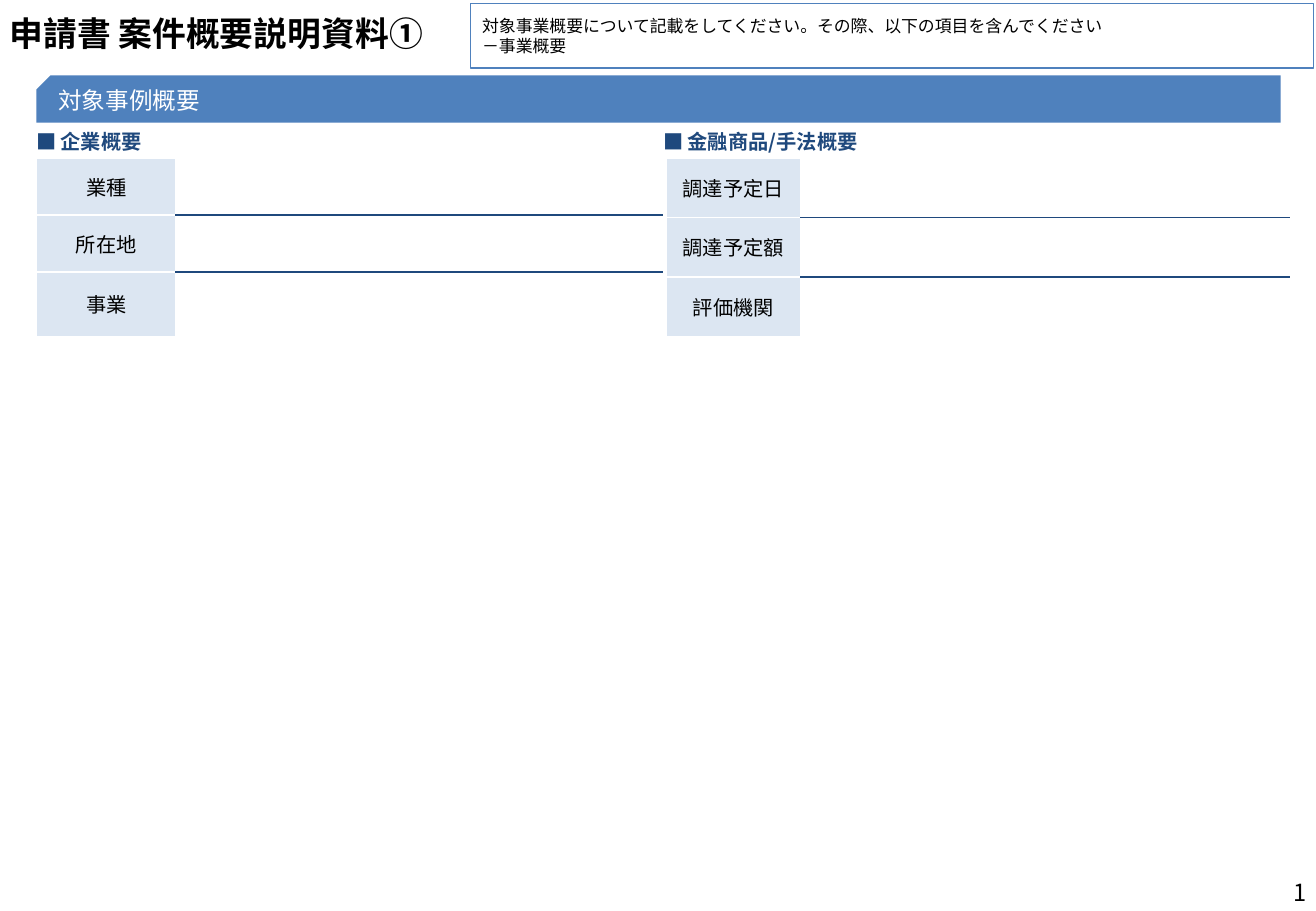
"""Build the application summary slide with two overview tables."""
from dataclasses import dataclass

from lxml import etree
from pptx import Presentation
from pptx.dml.color import RGBColor
from pptx.enum.shapes import MSO_SHAPE
from pptx.enum.text import MSO_ANCHOR, PP_ALIGN
from pptx.oxml.ns import qn
from pptx.util import Inches, Pt

RECT, SNIP, OCTAGON = MSO_SHAPE.RECTANGLE, MSO_SHAPE.SNIP_1_RECTANGLE, MSO_SHAPE.OCTAGON
TOP, MIDDLE = MSO_ANCHOR.TOP, MSO_ANCHOR.MIDDLE
LEFT, CENTER, RIGHT = PP_ALIGN.LEFT, PP_ALIGN.CENTER, PP_ALIGN.RIGHT
FONT = "Noto Sans CJK JP"
COLORS = {"black": "000000", "white": "FFFFFF", "navy": "1F497D", "blue": "4F81BD", "pale": "DCE6F2"}
SIDES = ("left", "top", "right", "bottom")


@dataclass
class Style:
    size: float
    color: str = "black"
    bold: bool = False
    align: PP_ALIGN = LEFT
    anchor: MSO_ANCHOR = MIDDLE
    margins: tuple = (0.1, 0.05, 0.1, 0.05)


@dataclass
class Section:
    heading: str
    heading_left: float
    table_left: float
    columns: tuple
    rows: tuple
    labels: tuple
    side_margin: float


SECTIONS = (
    Section("企業概要", 0.3, 0.3, (1.15, 4), (0.47, 0.47, 0.53), ("業種", "所在地", "事業"), 0.1),
    Section("金融商品/手法概要", 5.46, 5.48, (1.11, 4.02), (0.49, 0.49, 0.49),
            ("調達予定日", "調達予定額", "評価機関"), 0.04),
)
HEADING = Style(12, "navy", True, anchor=TOP, margins=(0, 0.04, 0, 0.04))


def rgb(name: str) -> RGBColor:
    return RGBColor.from_string(COLORS[name])


def write(tf, text: str, style: Style) -> None:
    p = tf.paragraphs[0]
    p.text = text
    p.alignment = style.align
    for r in p.runs:
        for name, value in {"size": Pt(style.size), "bold": style.bold, "name": FONT}.items():
            setattr(r.font, name, value)
        r.font.color.rgb = rgb(style.color)
        etree.SubElement(r.font._element, qn("a:ea"), typeface=FONT)


def fill_frame(s, text: str, style: Style) -> None:
    tf = s.text_frame
    tf.word_wrap = True
    tf.vertical_anchor = style.anchor
    for side, value in zip(SIDES, style.margins):
        setattr(tf, f"margin_{side}", Inches(value))
    write(tf, text, style)


def add_text(slide, box: tuple, text: str, style: Style) -> None:
    fill_frame(slide.shapes.add_textbox(*map(Inches, box)), text, style)


def add_box(slide, kind: MSO_SHAPE, box: tuple, text: str, style: Style, fill: str = "", line: str = ""):
    s = slide.shapes.add_shape(kind, *map(Inches, box))
    s.shadow.inherit = False
    if fill:
        s.fill.solid()
        s.fill.fore_color.rgb = rgb(fill)
    else:
        s.fill.background()
    if line:
        s.line.color.rgb = rgb(line)
        s.line.width = Pt(0.75)
    else:
        s.line.fill.background()
    fill_frame(s, text, style)
    return s


def add_heading(slide, left: float, text: str) -> None:
    s = add_box(slide, OCTAGON, (left, 1.02, 5.19, 0.28), text, HEADING)
    s.adjustments[0] = 0
    pPr = s.text_frame.paragraphs[0]._p.get_or_add_pPr()
    pPr.set("marL", str(Inches(0.2)))
    pPr.set("indent", str(Inches(-0.2)))
    etree.SubElement(pPr, qn("a:buFont"), typeface=FONT)
    etree.SubElement(pPr, qn("a:buChar"), char="■")


def add_border(cell, side: str, color: str) -> None:
    ln = etree.SubElement(cell._tc.get_or_add_tcPr(), qn(f"a:ln{side}"), w=str(Pt(1)))
    fill = etree.SubElement(ln, qn("a:solidFill"))
    etree.SubElement(fill, qn("a:srgbClr"), val=COLORS[color])


def add_section(slide, section: Section) -> None:
    add_heading(slide, section.heading_left, section.heading)
    count = len(section.rows)
    box = (section.table_left, 1.3, sum(section.columns), sum(section.rows))
    table = slide.shapes.add_table(count, 2, *map(Inches, box)).table
    table.first_row = table.horz_banding = False
    for column, width in zip(table.columns, section.columns):
        column.width = Inches(width)
    for i, (height, label) in enumerate(zip(section.rows, section.labels)):
        table.rows[i].height = Inches(height)
        for j, text in enumerate((label, "")):
            cell = table.cell(i, j)
            margins = (section.side_margin, 0.04) * 2
            for side, value in zip(SIDES, margins):
                setattr(cell, f"margin_{side}", Inches(value))
            cell.vertical_anchor = MIDDLE
            add_border(cell, "T", "navy" if j and i else "white")
            add_border(cell, "B", "navy" if j and i < count - 1 else "white")
            if text:
                cell.fill.solid()
                cell.fill.fore_color.rgb = rgb("pale")
                write(cell.text_frame, text, Style(12, align=CENTER))
            else:
                cell.fill.background()


def main() -> None:
    prs = Presentation()
    prs.slide_width, prs.slide_height = Inches(10.83), Inches(7.5)
    slide = prs.slides.add_slide(prs.slide_layouts[6])
    add_text(slide, (8.32, 7.14, 2.53, 0.4), "1", Style(14, align=RIGHT))
    add_text(slide, (-0.02, 0.05, 10.57, 0.44), "申請書 案件概要説明資料①", Style(20, bold=True))
    banner = add_box(slide, SNIP, (0.3, 0.62, 10.24, 0.39), "対象事例概要",
                     Style(14, "white", margins=(0.12, 0, 0, 0.04)), fill="blue")
    banner.adjustments[0] = 0.3
    banner._element.spPr.find(qn("a:xfrm")).set("flipH", "1")
    for section in SECTIONS:
        add_section(slide, section)
    add_box(slide, RECT, (3.87, 0.03, 6.94, 0.53),
            "対象事業概要について記載をしてください。その際、以下の項目を含んでください\n－事業概要",
            Style(10), line="blue")
    prs.save("out.pptx")


if __name__ == "__main__":
    main()
